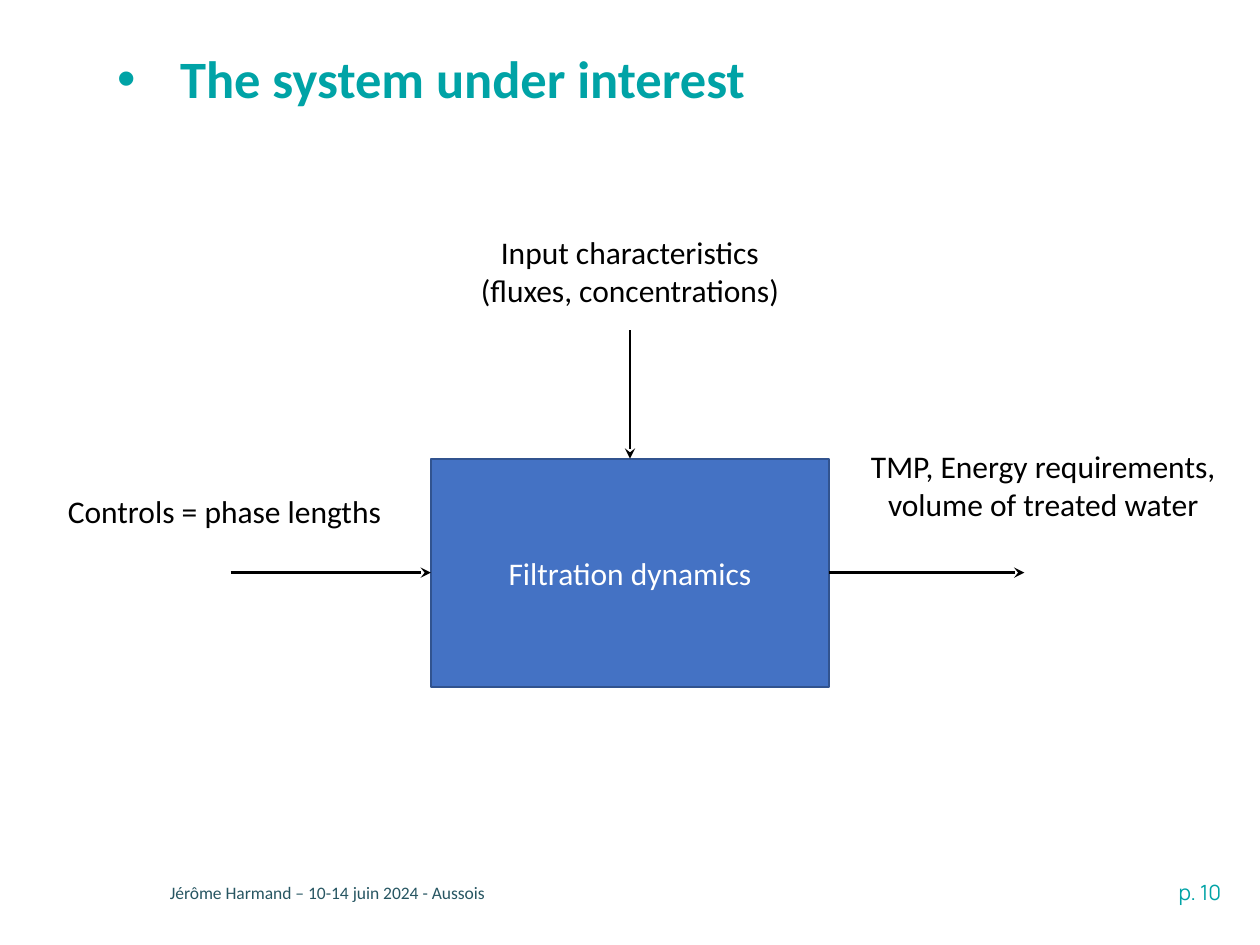
import pptx
import pptx.dml.color
import pptx.enum.shapes
import pptx.enum.text
import pptx.oxml.ns
import pptx.util
from lxml import etree

Inches, Pt = pptx.util.Inches, pptx.util.Pt
RGBColor = pptx.dml.color.RGBColor
ALIGN = pptx.enum.text.PP_ALIGN
MIDDLE = pptx.enum.text.MSO_ANCHOR.MIDDLE
qn = pptx.oxml.ns.qn

TEAL = RGBColor(0x00, 0xA3, 0xA6)
SLATE = RGBColor(0x27, 0x56, 0x62)
BLUE = RGBColor(0x44, 0x72, 0xC4)
NAVY = RGBColor(0x31, 0x53, 0x8F)
BLACK = RGBColor(0, 0, 0)
WHITE = RGBColor(255, 255, 255)

# Content: places are left, top, width, height in inches
TITLE = ("The system under interest", (0.93, 0.16, 8.38, 0.97))
SYSTEM = ("Filtration dynamics", (3.42, 3.64, 3.16, 1.81))
LABELS = [
    (["Input characteristics", "(fluxes, concentrations)"], (3.7, 1.8, 2.6, 0.71), ALIGN.CENTER),
    (["Controls = phase lengths"], (0.44, 3.86, 2.8, 0.4), ALIGN.LEFT),
    (["TMP, Energy requirements, volume of treated water"], (6.74, 3.5, 3.08, 0.71), ALIGN.CENTER),
]
FOOTER = [
    ("p. 10", (7.51, 6.93, 2.28, 0.3), ALIGN.RIGHT, 12, TEAL, "Manrope"),
    ("Jérôme Harmand – 10-14 juin 2024 - Aussois", (1.25, 6.95, 7.34, 0.27), ALIGN.LEFT, 10, SLATE, "Calibri"),
]
# Arrows: side of the system box, length outwards, whether it leads into the box
TOP, LEFT, RIGHT = 0, 1, 3
ARROWS = [(TOP, 1.02, True), (LEFT, 1.59, True), (RIGHT, 1.55, False)]


def write(frame, lines, align, size, color, font="Calibri", bold=False):
    frame.word_wrap = True
    for i, line in enumerate(lines):
        paragraph = frame.paragraphs[0] if i == 0 else frame.add_paragraph()
        paragraph.alignment = align
        run = paragraph.add_run()
        run.text = line
        run.font.name, run.font.size, run.font.bold = font, Pt(size), bold
        run.font.color.rgb = color


def add_label(lines, place, *style, **options):
    frame = slide.shapes.add_textbox(*map(Inches, place)).text_frame
    write(frame, lines, *style, **options)
    return frame


def add_arrow(box, side, length, inward):
    x, y, w, h = SYSTEM[1]
    near, far = {
        TOP: ((x + w / 2, y), (x + w / 2, y - length)),
        LEFT: ((x, y + h / 2), (x - length, y + h / 2)),
        RIGHT: ((x + w, y + h / 2), (x + w + length, y + h / 2)),
    }[side]
    start, end = (far, near) if inward else (near, far)
    arrow = slide.shapes.add_connector(
        pptx.enum.shapes.MSO_CONNECTOR.STRAIGHT, *map(Inches, start + end))
    (arrow.end_connect if inward else arrow.begin_connect)(box, side)
    arrow.line.color.rgb = BLACK
    arrow.line.width = Pt(1.5)
    etree.SubElement(arrow.line._get_or_add_ln(), qn("a:tailEnd"), type="stealth")
    etree.SubElement(arrow._element.spPr, qn("a:effectLst"))


deck = pptx.Presentation()
deck.slide_width, deck.slide_height = Inches(10), Inches(7.5)
slide = deck.slides.add_slide(deck.slide_layouts[6])

# Footer
for text, place, align, size, color, font in FOOTER:
    add_label([text], place, align, size, color, font)

# Bulleted title
title = add_label([TITLE[0]], TITLE[1], ALIGN.LEFT, 30, TEAL, bold=True)
title.vertical_anchor = MIDDLE
title.margin_left = 0
heading = title.paragraphs[0]
heading.line_spacing = 0.9
properties = heading._p.get_or_add_pPr()
properties.set("marL", str(Inches(0.5)))
properties.set("indent", str(Inches(-0.5)))
bullet_color = etree.SubElement(properties, qn("a:buClr"))
etree.SubElement(bullet_color, qn("a:srgbClr"), val=str(TEAL))
etree.SubElement(properties, qn("a:buFont"), typeface="Arial")
etree.SubElement(properties, qn("a:buChar"), char="•")

# System box
system = slide.shapes.add_shape(
    pptx.enum.shapes.MSO_SHAPE.RECTANGLE, *map(Inches, SYSTEM[1]))
system.shadow.inherit = False
system.fill.solid()
system.fill.fore_color.rgb = BLUE
system.line.color.rgb = NAVY
system.line.width = Pt(1)
system.text_frame.vertical_anchor = MIDDLE
write(system.text_frame, [SYSTEM[0]], ALIGN.CENTER, 18, WHITE)

# Inputs and outputs
for arrow in ARROWS:
    add_arrow(system, *arrow)
for lines, place, align in LABELS:
    add_label(lines, place, align, 18, BLACK)

deck.save("out.pptx")
